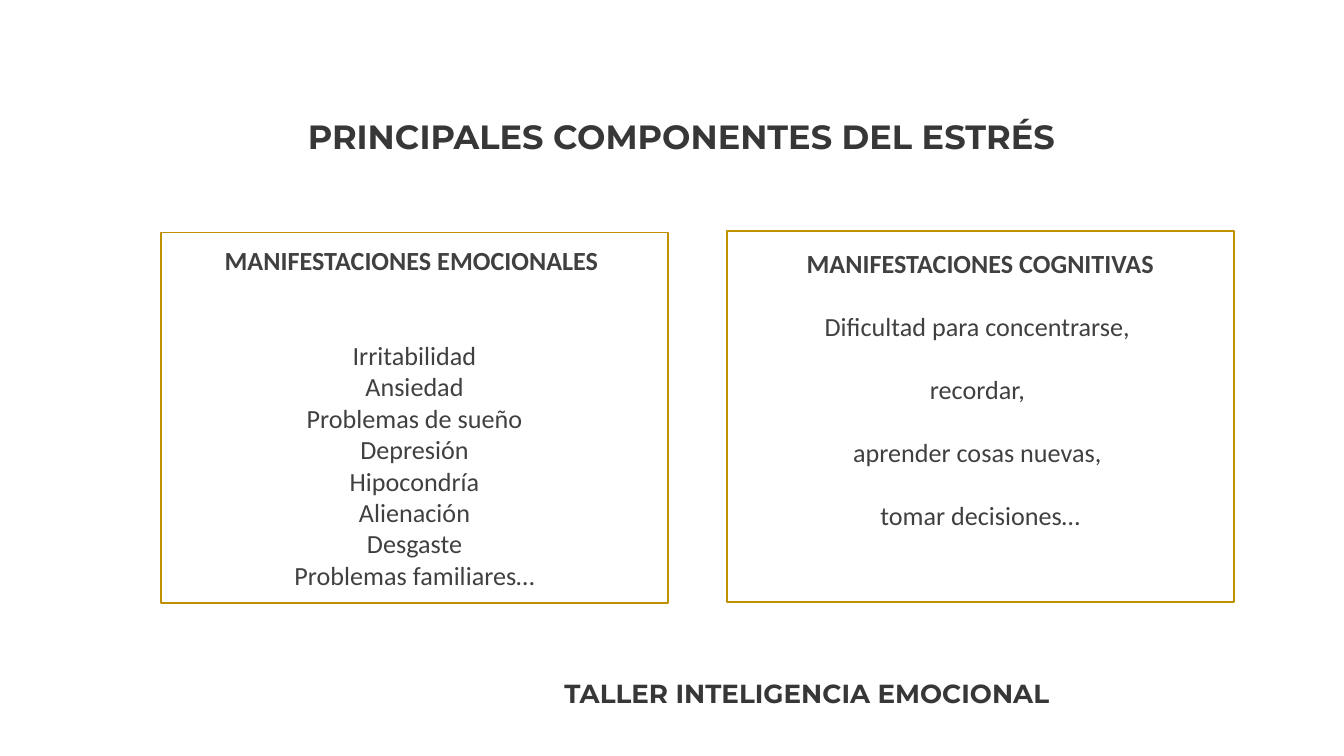
from pptx import Presentation
from pptx.dml.color import RGBColor
from pptx.enum.shapes import MSO_SHAPE
from pptx.enum.text import MSO_ANCHOR, MSO_AUTO_SIZE, PP_ALIGN
from pptx.util import Inches, Pt

RECT = MSO_SHAPE.RECTANGLE
TOP = MSO_ANCHOR.TOP
NO_FIT = MSO_AUTO_SIZE.NONE
LEFT, CENTER = PP_ALIGN.LEFT, PP_ALIGN.CENTER

LINE_HEIGHT = 17
PANEL_LEFT, PANEL_STEP = 12, 42.1
PANEL_WIDTH, PANEL_HEIGHT = 37.7, 27.6
PANELS = [
    {
        "heading": "MANIFESTACIONES EMOCIONALES ",
        "items": ["Irritabilidad", "Ansiedad", "Problemas de sueño", "Depresión",
                  "Hipocondría", "Alienación", "Desgaste", "Problemas familiares…"],
        "row": 17.3, "inset": 0.09, "after_heading": 2, "between_items": 0,
    },
    {
        "heading": "MANIFESTACIONES COGNITIVAS",
        "items": ["Dificultad para concentrarse, ", "recordar, ",
                  "aprender cosas nuevas, ", "tomar decisiones…"],
        "row": 17.2, "inset": 0.12, "after_heading": 1, "between_items": 1,
    },
]


def rgb(value):
    """Turn a hex string into a colour."""
    return RGBColor.from_string(value)


def grid(*cells):
    """Turn grid columns or rows of a tenth of an inch into lengths."""
    return [Inches(cell / 10) for cell in cells]


def write(p, text, font="Montserrat", size=14, color="373737", bold=True,
          align=LEFT, before=0):
    """Write one formatted run into a paragraph."""
    p.alignment = align
    p.space_before = Pt(before)
    r = p.add_run()
    r.text = text
    r.font.name = font
    r.font.size = Pt(size)
    r.font.bold = bold
    r.font.color.rgb = rgb(color)


class Deck:
    """Hold the style and the current slide."""

    ink, gold, body_font = "404040", "BF9000", "Calibri"

    def __init__(self, prs):
        """Add a title-only slide to the presentation."""
        self.slide = prs.slides.add_slide(prs.slide_layouts[5])

    def frame(self, sp, x=0.06, y=0.06):
        """Set the margins of a shape and return its text frame."""
        tf = sp.text_frame
        tf.word_wrap = True
        tf.auto_size = NO_FIT
        tf.vertical_anchor = TOP
        tf.margin_left = tf.margin_right = Inches(x)
        tf.margin_top = tf.margin_bottom = Inches(y)
        return tf

    def title(self, text, *cells):
        """Place and fill the title placeholder."""
        sp = self.slide.shapes.title
        sp.left, sp.top, sp.width, sp.height = grid(*cells)
        write(self.frame(sp).paragraphs[0], text, size=18, align=CENTER)

    def label(self, text, *cells):
        """Add a single-line text box."""
        sp = self.slide.shapes.add_textbox(*grid(*cells))
        write(self.frame(sp).paragraphs[0], text)

    def panel(self, column, row, heading, items, inset, after_heading, between_items):
        """Add an outlined box with a heading and a list of items."""
        sp = self.slide.shapes.add_shape(
            RECT, *grid(column, row, PANEL_WIDTH, PANEL_HEIGHT))
        sp.shadow.inherit = False
        sp.fill.background()
        sp.line.color.rgb = rgb(self.gold)
        sp.line.width = Pt(1)
        tf = self.frame(sp, x=0.1, y=inset)
        style = {"font": self.body_font, "color": self.ink, "align": CENTER}
        write(tf.paragraphs[0], heading, **style)
        for i, item in enumerate(items):
            gap = between_items if i else after_heading
            write(tf.add_paragraph(), item, bold=False,
                  before=gap * LINE_HEIGHT, **style)


def main():
    """Build the slide and save it."""
    prs = Presentation()
    prs.slide_width = Inches(10)
    prs.slide_height = prs.slide_width * 9 // 16
    s = Deck(prs)
    s.title("PRINCIPALES COMPONENTES DEL ESTRÉS", 4.6, 8, 92.2, 4.2)
    for i, panel in enumerate(PANELS):
        s.panel(PANEL_LEFT + i * PANEL_STEP, **panel)
    s.label("TALLER INTELIGENCIA EMOCIONAL", 41.4, 49.8, 57.1, 3.5)
    prs.save("out.pptx")


if __name__ == "__main__":
    main()
